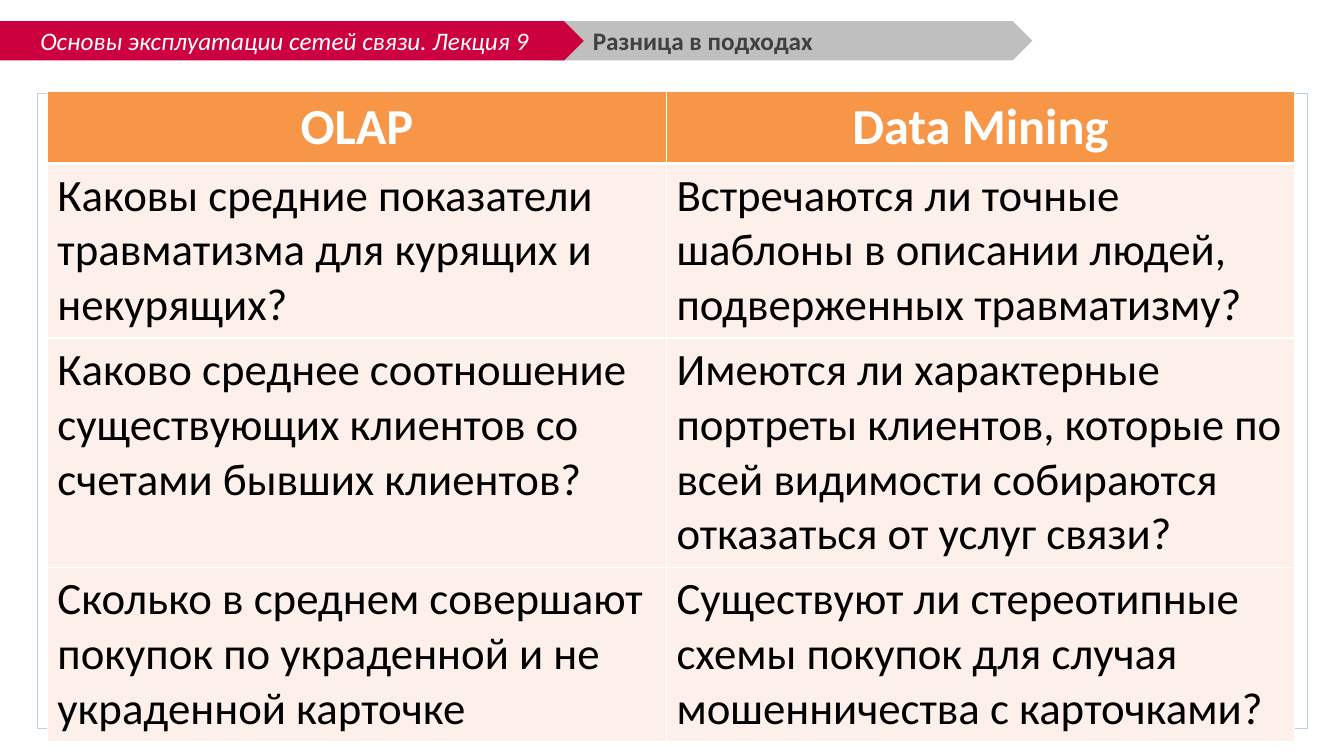
import pptx
import pptx.util
import pptx.dml.color
import pptx.enum.shapes
import pptx.enum.text
import pptx.oxml
import pptx.oxml.ns
from lxml import etree

LECTURE = "Основы эксплуатации сетей связи. Лекция 9"
HEADING = "Разница в подходах"
COMPARISON = [
    ("OLAP", "Data Mining"),
    ("Каковы средние показатели травматизма для курящих и некурящих?",
     "Встречаются ли точные шаблоны в описании людей, подверженных травматизму?"),
    ("Каково среднее соотношение существующих клиентов со счетами бывших клиентов?",
     "Имеются ли характерные портреты клиентов, которые по всей видимости "
     "собираются отказаться от услуг связи?"),
    ("Сколько в среднем совершают покупок по украденной и не украденной карточке",
     "Существуют ли стереотипные схемы покупок для случая мошенничества с карточками?"),
]
COLUMN_WIDTHS = [6.14, 6.23]
ROW_HEIGHTS = [0.7, 1.73, 2.27, 1.73]
TABLE_LEFT, TABLE_TOP = 0.47, 0.91
RIBBON_TOP, RIBBON_HEIGHT = 0.21, 0.39

THEME = {
    "font": "Calibri",
    "crimson": "CC003F", "gray": "BFBFBF", "frame": "B8D0ED",
    "orange": "F79646", "peach": "FDEFE9",
    "white": "FFFFFF", "black": "000000", "heading": "404040",
    "ribbon_size": 18, "header_size": 36, "body_size": 32,
}
SHAPE = pptx.enum.shapes.MSO_SHAPE
ALIGN = pptx.enum.text.PP_ALIGN
MIDDLE = pptx.enum.text.MSO_ANCHOR.MIDDLE
Inches = pptx.util.Inches


def color(name):
    return pptx.dml.color.RGBColor.from_string(THEME[name])


def write(frame, text, size, color_name, align=ALIGN.LEFT, bold=False, italic=False):
    frame.text = text
    frame.word_wrap = True
    para = frame.paragraphs[0]
    para.alignment = align
    font = para.font
    font.name, font.size = THEME["font"], pptx.util.Pt(THEME[size])
    font.bold, font.italic = bold, italic
    font.color.rgb = color(color_name)


def add_panel(page, preset, left, top, width, height, fill=None):
    panel = page.shapes.add_shape(
        preset, Inches(left), Inches(top), Inches(width), Inches(height))
    panel.shadow.inherit = False
    if fill:
        panel.fill.solid()
        panel.fill.fore_color.rgb = color(fill)
        panel.line.fill.background()
    else:
        panel.fill.background()
    return panel


def set_borders(cell, bottom_points, top_points):
    """Draw white borders; they must precede the cell's fill in the XML."""
    properties = cell._tc.get_or_add_tcPr()
    widths = {"lnL": 1, "lnR": 1, "lnT": top_points, "lnB": bottom_points}
    for tag, points in widths.items():
        border = etree.SubElement(properties, pptx.oxml.ns.qn("a:" + tag),
                                  w=str(pptx.util.Pt(points)))
        fill = etree.SubElement(border, pptx.oxml.ns.qn("a:solidFill"))
        etree.SubElement(fill, pptx.oxml.ns.qn("a:srgbClr"), val=THEME["white"])


def add_ribbons(page):
    add_panel(page, SHAPE.PENTAGON, 5.41, RIBBON_TOP, 4.83, RIBBON_HEIGHT, "gray")
    frame = add_panel(page, SHAPE.RECTANGLE, 0.37, 0.92, 12.6, 6.3)
    frame.line.color.rgb = color("frame")
    frame.line.width = pptx.util.Pt(0.25)
    lecture = add_panel(page, SHAPE.PENTAGON, -0.05, RIBBON_TOP, 5.84, RIBBON_HEIGHT, "crimson")
    write(lecture.text_frame, LECTURE, "ribbon_size", "white", ALIGN.CENTER, italic=True)
    lecture.text_frame.vertical_anchor = MIDDLE


def place_heading(page):
    """Put the title on the gray ribbon and in front of it."""
    title = page.shapes.title
    title.left, title.top = Inches(5.78), Inches(RIBBON_TOP)
    title.width, title.height = Inches(4.14), Inches(RIBBON_HEIGHT)
    write(title.text_frame, HEADING, "ribbon_size", "heading", bold=True)
    title.text_frame.vertical_anchor = MIDDLE
    title.text_frame.auto_size = pptx.enum.text.MSO_AUTO_SIZE.NONE
    title.element.getparent().append(title.element)


def add_comparison(page):
    table = page.shapes.add_table(
        len(COMPARISON), len(COLUMN_WIDTHS), Inches(TABLE_LEFT), Inches(TABLE_TOP),
        Inches(sum(COLUMN_WIDTHS)), Inches(sum(ROW_HEIGHTS))).table
    for column, width in zip(table.columns, COLUMN_WIDTHS):
        column.width = Inches(width)
    for row_index, texts in enumerate(COMPARISON):
        table.rows[row_index].height = Inches(ROW_HEIGHTS[row_index])
        is_header = row_index == 0
        for column_index, text in enumerate(texts):
            cell = table.cell(row_index, column_index)
            set_borders(cell, bottom_points=3 if is_header else 1,
                        top_points=3 if row_index == 1 else 1)
            cell.fill.solid()
            cell.fill.fore_color.rgb = color("orange" if is_header else "peach")
            if is_header:
                write(cell.text_frame, text, "header_size", "white", ALIGN.CENTER, bold=True)
                cell.vertical_anchor = MIDDLE
            else:
                write(cell.text_frame, text, "body_size", "black")


def main():
    deck = pptx.Presentation()
    deck.slide_width, deck.slide_height = Inches(13.33), Inches(7.5)
    page = deck.slides.add_slide(deck.slide_layouts.get_by_name("Title Only"))
    add_ribbons(page)
    place_heading(page)
    add_comparison(page)
    deck.save("out.pptx")


if __name__ == "__main__":
    main()
